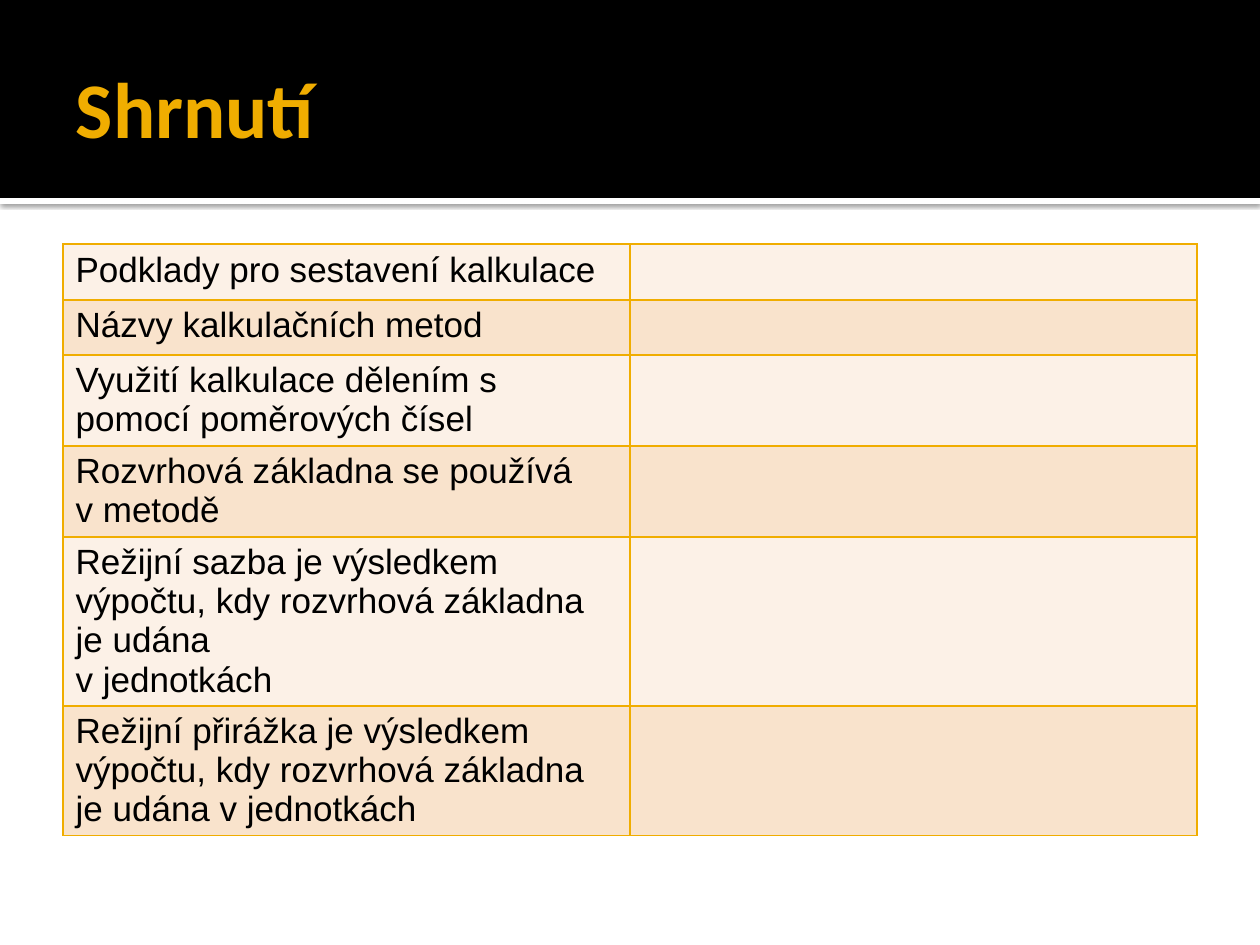
"""Build the summary slide: a dark title band above a two-column table to fill in."""
from dataclasses import dataclass

from lxml import etree
from pptx import Presentation
from pptx.dml.color import RGBColor
from pptx.enum import shapes, text
from pptx.oxml import ns, parse_xml
from pptx.util import Emu, Pt

BLACK = RGBColor(0x00, 0x00, 0x00)
WHITE = RGBColor(0xFF, 0xFF, 0xFF)
GOLD = RGBColor(0xF0, 0xAD, 0x00)
CREAM = RGBColor(0xFC, 0xF1, 0xE7)
PEACH = RGBColor(0xF9, 0xE3, 0xCC)
SCALE = 914400 / 126


@dataclass
class Band:
    top: int
    height: int
    color: RGBColor
    shadow: bool = False


@dataclass
class Row:
    height: int
    label: str


BANDS = [Band(198, 6, WHITE, True), Band(0, 198, BLACK)]
ROWS = [
    Row(56, "Podklady pro sestavení kalkulace"),
    Row(55, "Názvy kalkulačních metod"),
    Row(91, "Využití kalkulace dělením s pomocí poměrových čísel"),
    Row(91, "Rozvrhová základna se používá\nv metodě"),
    Row(169, "Režijní sazba je výsledkem výpočtu, kdy rozvrhová základna je udána\nv jednotkách"),
    Row(129, "Režijní přirážka je výsledkem výpočtu, kdy rozvrhová základna je udána v jednotkách"),
]


def px(n: int) -> Emu:
    """Turn pixels into EMU."""
    return Emu(round(n * SCALE))


def write(frame, words: str, *, font: str, size: int, color: RGBColor, bold: bool = False) -> None:
    """Put formatted text into a frame, one paragraph a line."""
    frame.text = words
    for para in frame.paragraphs:
        para.alignment = text.PP_ALIGN.LEFT
        for run in para.runs:
            run.font.name, run.font.size, run.font.bold = font, Pt(size), bold
            run.font.color.rgb = color


def draw_band(slide, band: Band) -> None:
    """Draw one full-width band."""
    box = slide.shapes.add_shape(
        shapes.MSO_SHAPE.RECTANGLE, 0, px(band.top), px(1260), px(band.height))
    box.fill.solid()
    box.fill.fore_color.rgb = band.color
    box.line.fill.background()
    box.shadow.inherit = False
    if band.shadow:
        effects = box.element.spPr.find(ns.qn("a:effectLst"))
        effects.append(parse_xml(
            f'<a:outerShdw {ns.nsdecls("a")} blurRad="{Pt(2.5)}" dist="{Pt(0.8)}" dir="5400000">'
            f'<a:srgbClr val="{BLACK}"><a:alpha val="60000"/></a:srgbClr></a:outerShdw>'))


def draw_title(slide, words: str) -> None:
    """Place the title in front of the bands."""
    title = slide.shapes.title
    slide.shapes.element.append(title.element)
    title.left, title.top, title.width, title.height = px(63), px(21), px(1134), px(173)
    frame = title.text_frame
    frame.vertical_anchor = text.MSO_ANCHOR.MIDDLE
    frame.margin_left, frame.margin_right = px(13), px(6)
    write(frame, words, font="Calibri", size=45, color=GOLD, bold=True)


def style_cell(cell, fill: RGBColor) -> None:
    """Give a cell its borders and fill."""
    props = cell._tc.get_or_add_tcPr()
    for side in ("lnL", "lnR", "lnT", "lnB"):
        line = etree.SubElement(props, ns.qn(f"a:{side}"), w=str(Pt(1)))
        solid = etree.SubElement(line, ns.qn("a:solidFill"))
        etree.SubElement(solid, ns.qn("a:srgbClr"), val=str(GOLD))
    cell.fill.solid()
    cell.fill.fore_color.rgb = fill


def draw_table(slide, rows: list[Row]) -> None:
    """Draw the table with labels on the left and blanks on the right."""
    high = sum(row.height for row in rows)
    table = slide.shapes.add_table(len(rows), 2, px(63), px(244), px(1134), px(high)).table
    table.first_row = table.horz_banding = False
    for i, row in enumerate(rows):
        table.rows[i].height = px(row.height)
        for cell in table.rows[i].cells:
            style_cell(cell, PEACH if i % 2 else CREAM)
        write(table.cell(i, 0).text_frame, row.label, font="Arial", size=20, color=BLACK)


def main() -> None:
    """Build and save the slide."""
    deck = Presentation()
    deck.slide_width, deck.slide_height = px(1260), px(945)
    slide = deck.slides.add_slide(deck.slide_layouts[5])
    slide.background.fill.solid()
    slide.background.fill.fore_color.rgb = WHITE
    for band in BANDS:
        draw_band(slide, band)
    draw_title(slide, "Shrnutí")
    draw_table(slide, ROWS)
    deck.save("out.pptx")


if __name__ == "__main__":
    main()
